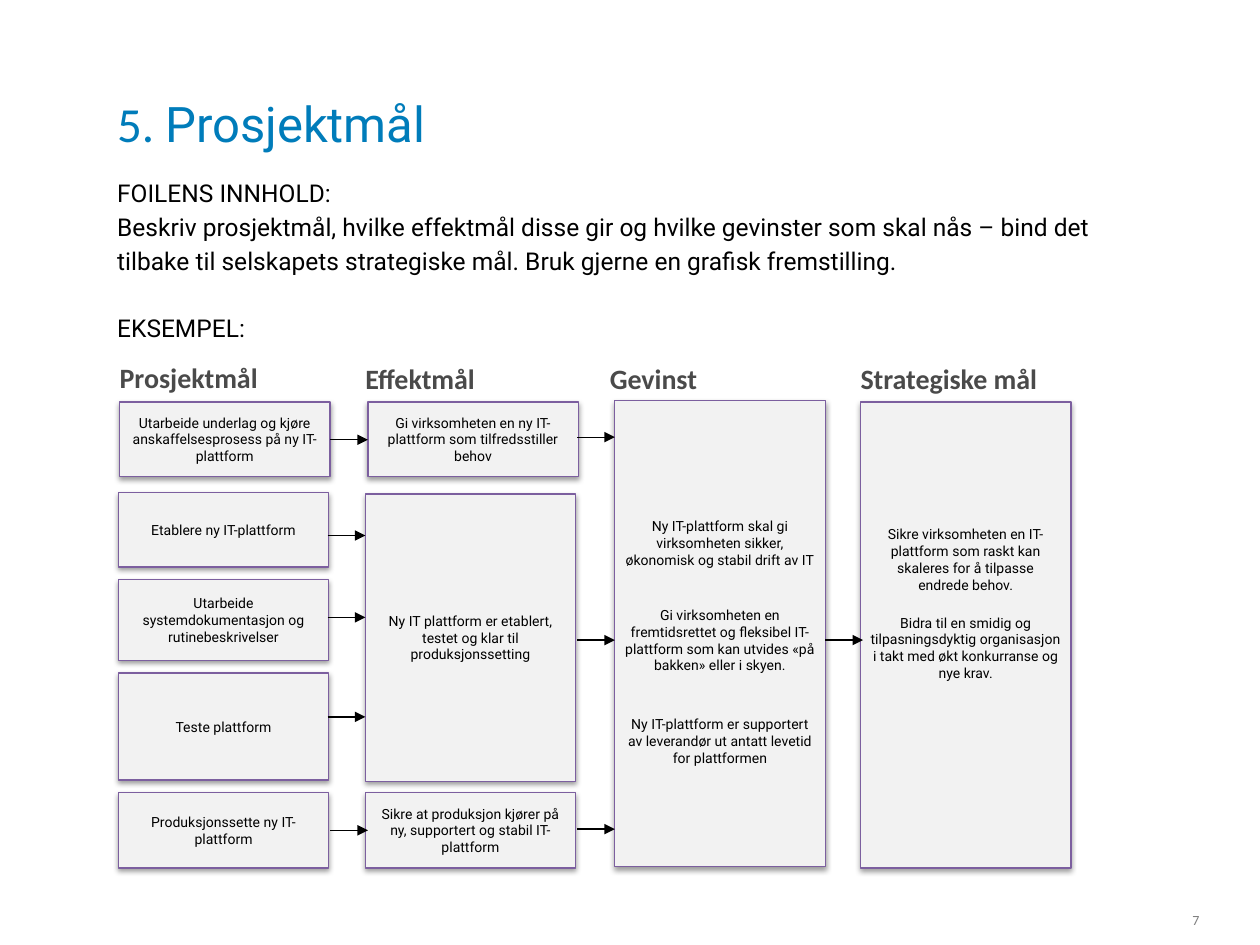
from pptx import Presentation
from pptx.dml.color import RGBColor
from pptx.enum.shapes import MSO_CONNECTOR, MSO_SHAPE
from pptx.enum.text import MSO_ANCHOR, MSO_AUTO_SIZE, PP_ALIGN
from pptx.oxml import parse_xml
from pptx.oxml.ns import nsdecls
from pptx.util import Inches, Pt

BLUE = RGBColor(0x00, 0x7C, 0xBA)
BLACK = RGBColor(0x00, 0x00, 0x00)
HEADING = RGBColor(0x4A, 0x4A, 0x4A)
GREY = RGBColor(0x7F, 0x7F, 0x7F)
PANEL = RGBColor(0xF2, 0xF2, 0xF2)
PURPLE = RGBColor(0x7C, 0x5F, 0x9F)
COLS, ROWS = 100, 75
GOAL_X, EFFECT_X, GAIN_X, STRATEGY_X = 9.4, 29, 48.8, 68.3
BOX_W, ARROW_W = 16.7, 3


class Deck:
    """Style and current slide; places are given in columns and rows."""

    def __init__(self):
        self.prs = Presentation()
        self.prs.slide_width, self.prs.slide_height = Inches(10), Inches(7.5)
        self.s = self.prs.slides.add_slide(self.prs.slide_layouts[1])

    def x(self, cols):
        return int(self.prs.slide_width * cols / COLS)

    def y(self, rows):
        return int(self.prs.slide_height * rows / ROWS)

    def area(self, left, top, width, height):
        return self.x(left), self.y(top), self.x(width), self.y(height)

    def place(self, sp, area):
        sp.left, sp.top, sp.width, sp.height = self.area(*area)

    def frame(self, sp, anchor, insets):
        tf = sp.text_frame
        tf.word_wrap = True
        tf.auto_size = MSO_AUTO_SIZE.NONE
        tf.vertical_anchor = anchor
        (tf.margin_left, tf.margin_top,
         tf.margin_right, tf.margin_bottom) = map(Inches, insets)
        return tf

    def paragraph(self, tf, first, align=PP_ALIGN.LEFT, before=0):
        p = tf.paragraphs[0] if first else tf.add_paragraph()
        p.alignment = align
        p.space_before = Pt(before)
        return p

    def run(self, p, text, size, color, font="Roboto", bold=False):
        r = p.add_run()
        r.text = text
        r.font.name, r.font.size, r.font.bold = font, Pt(size), bold
        r.font.color.rgb = color

    def title(self, area, number, text):
        sp = self.s.shapes.title
        self.place(sp, area)
        tf = self.frame(sp, MSO_ANCHOR.MIDDLE, (0.1, 0.05, 0.1, 0.05))
        p = self.paragraph(tf, True)
        self.run(p, number, 28, BLUE, "Calibri")
        self.run(p, text, 28, BLUE)

    def body(self, area, items):
        sp = self.s.placeholders[1]
        self.place(sp, area)
        tf = self.frame(sp, MSO_ANCHOR.TOP, (0.1, 0.1, 0.1, 0.1))
        for i, (text, before) in enumerate(items):
            p = self.paragraph(tf, i == 0, before=before)
            p.line_spacing = 1.15
            pPr = p._p.get_or_add_pPr()
            pPr.set("marL", "0")
            pPr.set("indent", "0")
            pPr.append(parse_xml(f"<a:buNone {nsdecls('a')}/>"))
            self.run(p, text, 14, BLACK)

    def label(self, area, text, size, color, bold=False, align=PP_ALIGN.LEFT,
              anchor=MSO_ANCHOR.TOP, left_inset=0):
        sp = self.s.shapes.add_textbox(*self.area(*area))
        tf = self.frame(sp, anchor, (left_inset, 0.05, 0.1, 0.05))
        self.run(self.paragraph(tf, True, align), text, size, color, "Calibri", bold)

    def box(self, left, top, height, *items, top_inset=0.08, bottom_inset=0.08):
        """Shadowed box; each item is a text and the space before it."""
        sp = self.s.shapes.add_shape(
            MSO_SHAPE.RECTANGLE, *self.area(left, top, BOX_W, height))
        sp.fill.solid()
        sp.fill.fore_color.rgb = PANEL
        sp.line.color.rgb = PURPLE
        sp.line.width = Pt(0.75)
        sp.shadow.inherit = False
        sp._element.spPr[-1].append(parse_xml(
            f'<a:outerShdw {nsdecls("a")} blurRad="{Pt(3.1)}" dist="{Pt(1.6)}" '
            'dir="5400000" rotWithShape="0"><a:srgbClr val="000000">'
            '<a:alpha val="38000"/></a:srgbClr></a:outerShdw>'))
        tf = self.frame(sp, MSO_ANCHOR.MIDDLE, (0.08, top_inset, 0.08, bottom_inset))
        for i, (text, before) in enumerate(items):
            p = self.paragraph(tf, i == 0, PP_ALIGN.CENTER, before)
            self.run(p, text, 8, BLACK)

    def arrow(self, left, row):
        c = self.s.shapes.add_connector(
            MSO_CONNECTOR.STRAIGHT, self.x(left), self.y(row),
            self.x(left + ARROW_W), self.y(row))
        c.line.color.rgb = BLACK
        c.line.width = Pt(0.75)
        c.line._get_or_add_ln().append(
            parse_xml(f'<a:tailEnd {nsdecls("a")} type="triangle"/>'))
        c._element.spPr.append(parse_xml(f"<a:effectLst {nsdecls('a')}/>"))


def main():
    d = Deck()
    d.title((8.3, 3.5, 78, 12.5), "5. ", "Prosjektmål")
    d.body((8.3, 12.8, 79.7, 18.3), [
        ("FOILENS INNHOLD:", 0),
        ("Beskriv prosjektmål, hvilke effektmål disse gir og hvilke gevinster som "
         "skal nås – bind det tilbake til selskapets strategiske mål. Bruk gjerne "
         "en grafisk fremstilling.", 0),
        ("EKSEMPEL:", 19.3),
    ])
    d.label((90.6, 72, 5.6, 2), "7", 8, GREY, align=PP_ALIGN.RIGHT,
            anchor=MSO_ANCHOR.MIDDLE, left_inset=0.1)

    for left, top, text in [(9.5, 28.1, "Prosjektmål"), (EFFECT_X, 28.2, "Effektmål"),
                            (48.4, 28.2, "Gevinst"),
                            (STRATEGY_X, 28.2, "Strategiske mål")]:
        d.label((left, top, 17.4, 2.8), text, 16, HEADING, bold=True)

    for left, top, height, text in [
        (9.5, 31.9, 5.9,
         "Utarbeide underlag og kjøre anskaffelsesprosess på ny IT-plattform"),
        (GOAL_X, 39.1, 5.9, "Etablere ny IT-plattform"),
        (GOAL_X, 46, 6.4, "Utarbeide systemdokumentasjon og rutinebeskrivelser"),
        (GOAL_X, 53.4, 8.5, "Teste plattform"),
        (GOAL_X, 62.9, 6, "Produksjonssette ny IT-plattform"),
        (29.2, 31.9, 5.9,
         "Gi virksomheten en ny IT-plattform som tilfredsstiller behov"),
        (EFFECT_X, 39.2, 22.8,
         "Ny IT plattform er etablert, testet og klar til produksjonssetting"),
        (EFFECT_X, 62.9, 6,
         "Sikre at produksjon kjører på ny, supportert og stabil IT-plattform"),
    ]:
        d.box(left, top, height, (text, 0))

    d.box(GAIN_X, 31.8, 37,
          ("Ny IT-plattform skal gi virksomheten sikker, økonomisk og stabil "
           "drift av IT", 0),
          ("Gi virksomheten en fremtidsrettet og fleksibel IT-plattform som kan "
           "utvides «på bakken» eller i skyen.", 22),
          ("Ny IT-plattform er supportert av leverandør ut antatt levetid for "
           "plattformen", 24),
          top_inset=0.21)
    d.box(STRATEGY_X, 31.9, 37,
          ("Sikre virksomheten en IT-plattform som raskt kan skaleres for å "
           "tilpasse endrede behov.", 0),
          ("Bidra til en smidig og tilpasningsdyktig organisasjon i takt med økt "
           "konkurranse og nye krav.", 12),
          bottom_inset=0.58)

    for left, rows in [(26.2, (34.9, 65.9)), (26, (42.5, 49, 56.9)),
                       (45.8, (34.7, 50.8, 65.8)), (65.5, (50.8,))]:
        for row in rows:
            d.arrow(left, row)
    d.prs.save("out.pptx")


if __name__ == "__main__":
    main()
